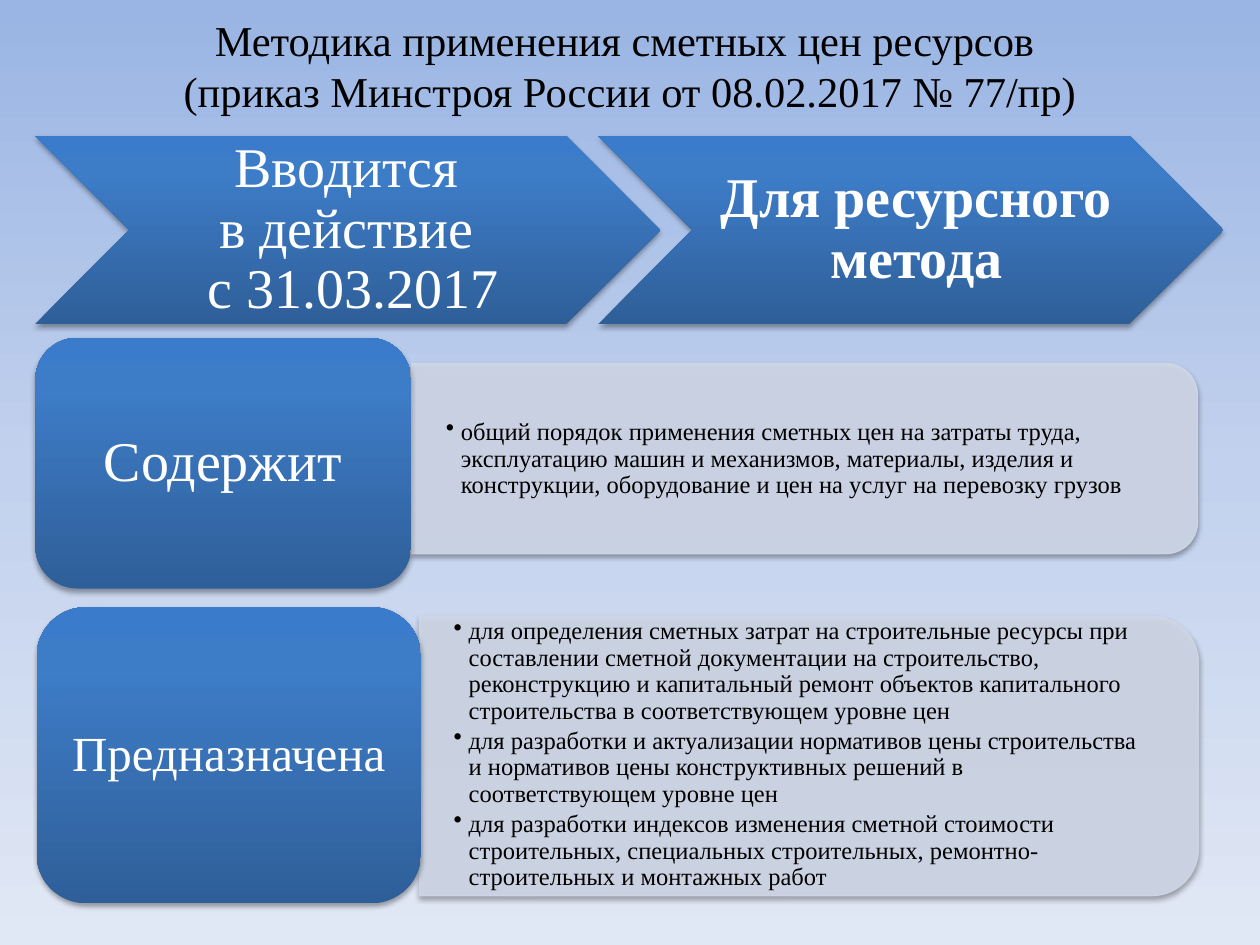
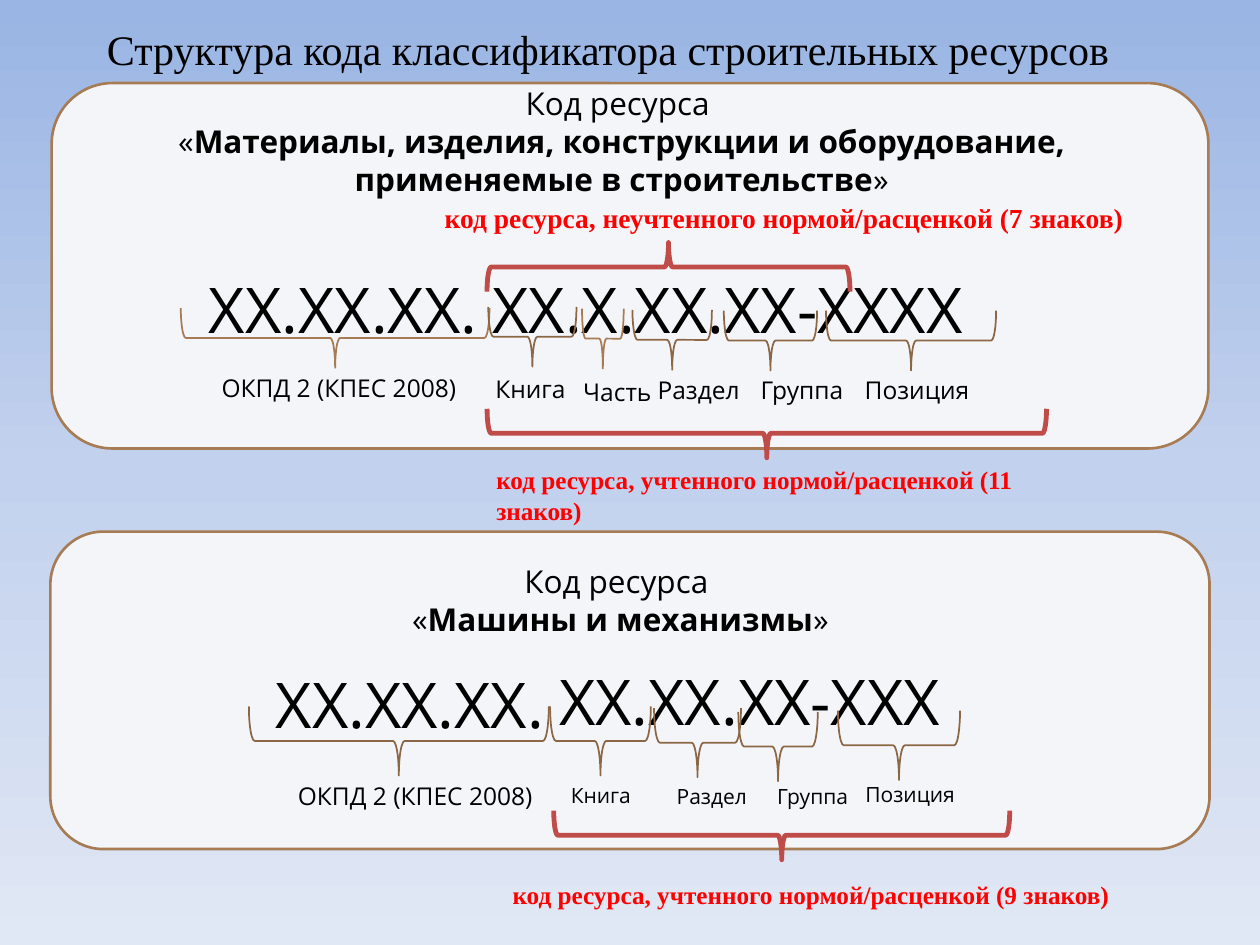
from lxml import etree
from pptx import Presentation
from pptx.dml.color import RGBColor
from pptx.enum.shapes import MSO_SHAPE
from pptx.enum.text import MSO_ANCHOR, PP_ALIGN
from pptx.oxml.ns import qn
from pptx.util import Pt

CHEVRON = MSO_SHAPE.CHEVRON
ROUNDED = MSO_SHAPE.ROUNDED_RECTANGLE
TAB = MSO_SHAPE.ROUND_2_SAME_RECTANGLE
BRACE = MSO_SHAPE.RIGHT_BRACE
TOP, MIDDLE = MSO_ANCHOR.TOP, MSO_ANCHOR.MIDDLE
LEFT, CENTER = PP_ALIGN.LEFT, PP_ALIGN.CENTER

BLACK = RGBColor(0x00, 0x00, 0x00)
WHITE = RGBColor(0xFF, 0xFF, 0xFF)
RED = RGBColor(0xFF, 0x00, 0x00)
BRICK = RGBColor(0xBF, 0x4C, 0x48)
TAN = RGBColor(0xA7, 0x7B, 0x53)
BROWN = RGBColor(0x8C, 0x67, 0x46)
PALE = RGBColor(0xF4, 0xF5, 0xF9)
GREY_BLUE = RGBColor(0xD0, 0xD8, 0xE8)
SKY_STOPS = (
    (0, RGBColor(0x9A, 0xB5, 0xE4)),
    (50, RGBColor(0xC2, 0xD1, 0xED)),
    (100, RGBColor(0xE1, 0xE8, 0xF5)),
)
BLUE_STOPS = (
    (0, RGBColor(0x2F, 0x5F, 0x99)),
    (80, RGBColor(0x3D, 0x7C, 0xC7)),
    (100, RGBColor(0x3A, 0x7C, 0xCB)),
)

SERIF = "Times New Roman"
SANS = "Open Sans"
DEFAULT_INSETS = (7.2, 3.6, 7.2, 3.6)
CHEVRON_INSETS = (10, 3.6, 3.6, 3.6)
BULLET_INSETS = (19.4, 10, 19.4, 10)
BULLET_INDENT = 8.64

CONTAINS = [
    "общий порядок применения сметных цен на затраты труда, эксплуатацию машин и механизмов, "
    "материалы, изделия и конструкции, оборудование и цен на услуг на перевозку грузов",
]
PURPOSES = [
    "для определения сметных затрат на строительные ресурсы при составлении сметной документации "
    "на строительство, реконструкцию и капитальный ремонт объектов капитального строительства "
    "в соответствующем уровне цен",
    "для разработки и актуализации нормативов цены строительства и нормативов цены "
    "конструктивных решений в соответствующем уровне цен",
    "для разработки индексов изменения сметной стоимости строительных, специальных строительных, "
    "ремонтно-строительных и монтажных работ",
]

MATERIAL_LABELS = [
    ("ОКПД 2 (КПЕС 2008)", 113.8, 209.5, 159.8, 14),
    ("Книга", 273.6, 210.2, 59, 14),
    ("Часть", 323.3, 211.7, 59, 14),
    ("Раздел", 366.5, 211, 65.5, 14),
    ("Группа", 425.5, 211, 65.5, 14),
    ("Позиция ", 483.8, 211, 84.2, 14),
]
MATERIAL_BRACES = [
    (103.3, 176, 176.4, TAN),
    (279, 175.3, 50.4, BROWN),
    (332.6, 176.4, 23.8, TAN),
    (361.4, 177.1, 45.4, BROWN),
    (413.6, 177.5, 53.3, BROWN),
    (472, 177.5, 97.2, BROWN),
]
MACHINE_LABELS = [
    ("ОКПД 2 (КПЕС 2008)", 149.8, 442.8, 175, 14),
    ("Книга", 311, 443.5, 64.8, 12),
    ("Раздел", 370.8, 444.2, 72, 12),
    ("Группа", 428.4, 444.2, 72, 12),
    ("Позиция ", 475.2, 443, 92.9, 12),
]
MACHINE_BRACES = [
    (142.2, 403.6, 171.4, BROWN),
    (314.3, 403.6, 57.6, BROWN),
    (373.7, 404.6, 49.7, BROWN),
    (421.9, 406.8, 45.4, BROWN),
    (478.8, 406.1, 69.8, BROWN),
]


def set_gradient(fill, element, stops, angle):
    fill.gradient()
    fill.gradient_angle = angle
    stop_list = next(element.iter(qn("a:gsLst")))
    stop_list.clear()
    for position, color in stops:
        stop = etree.SubElement(stop_list, qn("a:gs"), pos=str(position * 1000))
        etree.SubElement(stop, qn("a:srgbClr"), val=str(color))


def set_opacity(element, percent):
    for color in list(element.iter(qn("a:srgbClr"))):
        etree.SubElement(color, qn("a:alpha"), val=str(percent * 1000))


class Deck:
    def __init__(self):
        self.presentation = Presentation()
        self.presentation.slide_width = Pt(720)
        self.presentation.slide_height = Pt(540)
        master = self.presentation.slide_master
        set_gradient(master.background.fill, master.element, SKY_STOPS, 270)
        self.slide = None

    def new_slide(self):
        self.slide = self.presentation.slides.add_slide(self.presentation.slide_layouts[6])

    def set_text(self, shape, lines, size, font=SERIF, color=BLACK, bold=False, align=CENTER,
                 anchor=TOP, insets=DEFAULT_INSETS, spacing=None):
        frame = shape.text_frame
        frame.word_wrap = True
        frame.vertical_anchor = anchor
        frame.margin_left, frame.margin_top, frame.margin_right, frame.margin_bottom = map(Pt, insets)
        for index, line in enumerate(lines):
            paragraph = frame.add_paragraph() if index else frame.paragraphs[0]
            paragraph.text = line
            paragraph.alignment = align
            paragraph.line_spacing = spacing
            for run in paragraph.runs:
                self.format_run(run, size, font, color, bold)
        return frame

    def format_run(self, run, size, font, color, bold):
        run.font.name = font
        run.font.size = Pt(size)
        run.font.bold = bold
        run.font.color.rgb = color

    def text(self, box, lines, size, **style):
        return self.set_text(self.slide.shapes.add_textbox(*map(Pt, box)), lines, size, **style)

    def shape(self, kind, box, rotation=0):
        left, top, width, height = box
        if rotation in (90, 270):
            left, top = left + (width - height) / 2, top + (height - width) / 2
            width, height = height, width
        shape = self.slide.shapes.add_shape(kind, Pt(left), Pt(top), Pt(width), Pt(height))
        shape.rotation = rotation
        shape.shadow.inherit = False
        return shape

    def add_shadow(self, shape):
        effects = shape.element.spPr.find(qn("a:effectLst"))
        shadow = etree.SubElement(effects, qn("a:outerShdw"), blurRad=str(Pt(3.1)),
                                  dist=str(Pt(1.8)), dir="5400000", rotWithShape="0")
        color = etree.SubElement(shadow, qn("a:srgbClr"), val=str(BLACK))
        etree.SubElement(color, qn("a:alpha"), val="35000")

    def blue_block(self, kind, box, caption, size, bold=False, insets=DEFAULT_INSETS):
        block = self.shape(kind, box)
        set_gradient(block.fill, block.element.spPr, BLUE_STOPS, 90)
        block.line.fill.background()
        self.add_shadow(block)
        self.set_text(block, [caption], size, color=WHITE, bold=bold, anchor=MIDDLE,
                      insets=insets, spacing=0.9)

    def bullet_tab(self, box, text_box, lines):
        tab = self.shape(TAB, box, 90)
        tab.fill.solid()
        tab.fill.fore_color.rgb = GREY_BLUE
        tab.line.color.rgb = GREY_BLUE
        tab.line.width = Pt(0.75)
        set_opacity(tab.element.spPr, 90)
        self.add_shadow(tab)
        frame = self.text(text_box, lines, 14, align=LEFT, anchor=MIDDLE,
                          insets=BULLET_INSETS, spacing=0.9)
        for paragraph in frame.paragraphs:
            paragraph.space_after = Pt(2.1)
            properties = paragraph._p.get_or_add_pPr()
            properties.set("marL", str(Pt(BULLET_INDENT)))
            properties.set("indent", str(-Pt(BULLET_INDENT)))
            etree.SubElement(properties, qn("a:buChar"), char="•")

    def panel(self, box, heading_box, name):
        panel = self.shape(ROUNDED, box)
        panel.fill.solid()
        panel.fill.fore_color.rgb = PALE
        panel.line.color.rgb = TAN
        panel.line.width = Pt(1.5)
        frame = self.text(heading_box, ["Код ресурса ", "«"], 18, font=SANS)
        for part, bold in ((name, True), ("»", False)):
            run = frame.paragraphs[1].add_run()
            run.text = part
            self.format_run(run, 18, SANS, BLACK, bold)

    def brace(self, box, color, weight=1, rotation=90):
        brace = self.shape(BRACE, box, rotation)
        brace.fill.background()
        brace.line.color.rgb = color
        brace.line.width = Pt(weight)

    def code(self, parts, braces, brace_height, labels):
        for text, box in parts:
            self.text(box, [text], 36, font=SANS, align=LEFT)
        for left, top, width, color in braces:
            self.brace((left, top, width, brace_height), color)
        for label, left, top, width, size in labels:
            self.text((left, top, width, 24), [label], size, font=SANS)

    def red_note(self, brace_box, rotation, text_box, note, size):
        self.brace(brace_box, BRICK, 2.75, rotation)
        self.text(text_box, [note], size, color=RED, bold=True, align=LEFT)


def build_method_slide(deck):
    deck.new_slide()
    deck.text((36, 9.4, 648, 55.4),
              ["Методика применения сметных цен ресурсов \v(приказ Минстроя России от 08.02.2017 № 77/пр)"],
              24.3, anchor=MIDDLE)
    deck.bullet_tab((235, 207.7, 449.3, 108.7), (235.4, 213.1, 443.5, 98.6), CONTAINS)
    deck.blue_block(ROUNDED, (20.2, 193, 214.6, 143.3), "Содержит", 32)
    deck.bullet_tab((239.8, 352, 445, 159.8), (239.8, 359.3, 437, 144), PURPOSES)
    deck.blue_block(ROUNDED, (20.9, 347, 219.6, 169.2), "Предназначена", 28)
    steps = [("Вводится \vв действие \vс 31.03.2017", False), ("Для ресурсного метода", True)]
    for index, (caption, bold) in enumerate(steps):
        deck.blue_block(CHEVRON, (20.2 + 321.8 * index, 77.8, 357.1, 107.3), caption, 32,
                        bold, CHEVRON_INSETS)


def build_code_slide(deck):
    deck.new_slide()
    deck.text((54, 10, 658, 39.6), ["Структура кода классификатора строительных ресурсов"], 24, align=LEFT)
    deck.panel((28.8, 303.8, 662.4, 181.4), (84.2, 317.5, 540.7, 51), "Машины и механизмы")
    deck.code([("XX.XX.XX.", (150.5, 376.6, 195, 57.6)), ("XX.XX.XX-XXX", (312.5, 375.1, 268.6, 57.6))],
              MACHINE_BRACES, 39.6, MACHINE_LABELS)
    deck.panel((29.5, 47.5, 661, 208.8), (50.4, 44.6, 609.8, 72.7),
               "Материалы, изделия, конструкции и оборудование, применяемые в строительстве")
    deck.code([("XX.XX.XX.", (112.3, 151.2, 195, 49.7)), ("XX.X.XX.XX-XXXX", (274.3, 151.2, 331.2, 49.7))],
              MATERIAL_BRACES, 34.2, MATERIAL_LABELS)
    deck.red_note((278.3, 233.6, 319.7, 28), 90, (276.5, 262, 361.4, 36.7),
                  "код ресурса, учтенного нормой/расценкой (11 знаков)", 14.4)
    deck.red_note((278.3, 138.6, 207.4, 28), 270, (247, 111.6, 423.4, 39.6),
                  "код ресурса, неучтенного нормой/расценкой (7 знаков)", 15.7)
    deck.red_note((316.4, 463.3, 260.6, 28), 90, (285.8, 499, 361.4, 36.7),
                  "код ресурса, учтенного нормой/расценкой (9 знаков)", 14.4)


def main():
    deck = Deck()
    build_method_slide(deck)
    build_code_slide(deck)
    deck.presentation.save("out.pptx")


if __name__ == "__main__":
    main()
